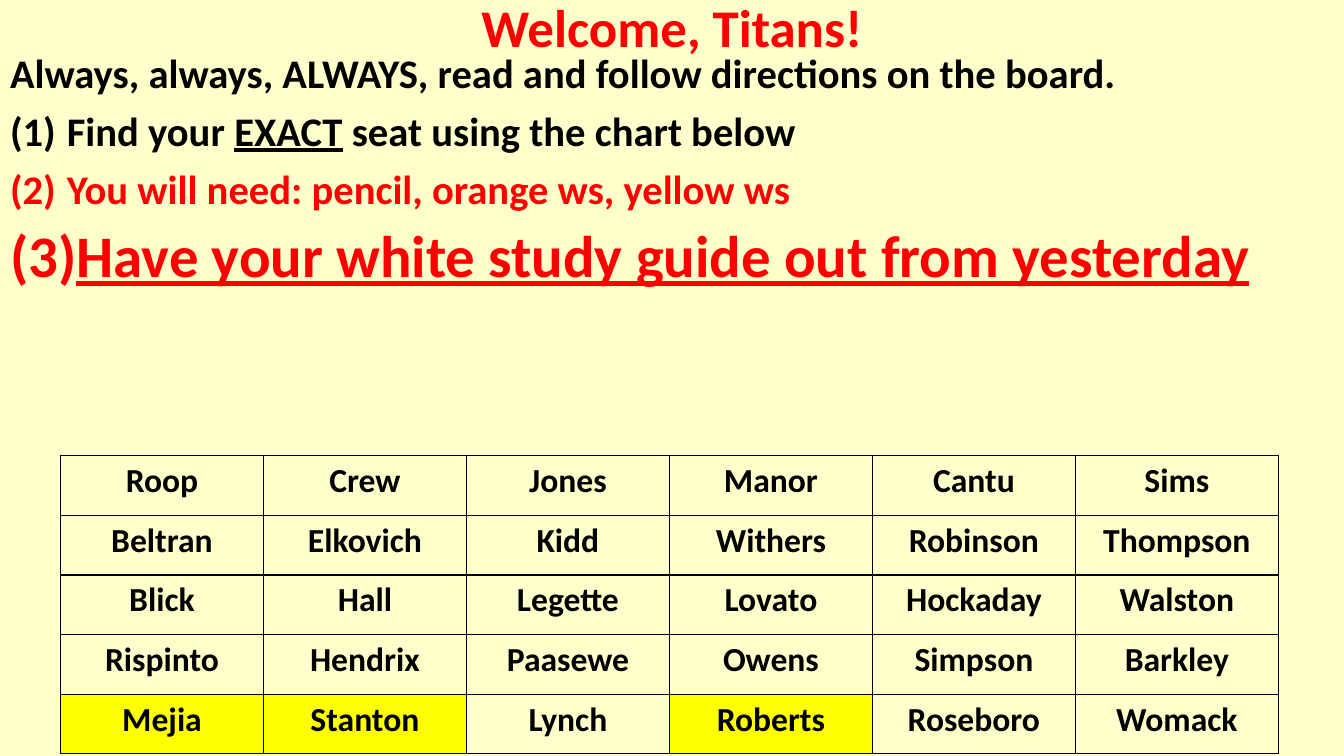
from lxml.etree import SubElement
from pptx import Presentation
from pptx.dml.color import RGBColor
from pptx.enum.text import MSO_ANCHOR, MSO_AUTO_SIZE, PP_ALIGN
from pptx.oxml.ns import qn
from pptx.util import Pt

LEFT, CENTER = PP_ALIGN.LEFT, PP_ALIGN.CENTER
TOP, BOTTOM = MSO_ANCHOR.TOP, MSO_ANCHOR.BOTTOM
NO_FIT = MSO_AUTO_SIZE.NONE

COLORS = {"back": "FFFFCC", "ink": "000000", "alert": "FF0000", "mark": "FFFF00"}

STEPS = [
    (False, 29, "ink", [("Always, always, ALWAYS, read and follow directions on the board.", False)]),
    (True, 29, "ink", [("Find your ", False), ("EXACT", True), (" seat using the chart below", False)]),
    (True, 29, "alert", [("You will need: pencil, orange ws, yellow ws", False)]),
    (True, 42, "alert", [("Have your white study guide out from yesterday", True)]),
]

SEATS = [
    ["Roop", "Crew", "Jones", "Manor", "Cantu", "Sims"],
    ["Beltran", "Elkovich", "Kidd", "Withers", "Robinson", "Thompson"],
    ["Blick", "Hall", "Legette", "Lovato", "Hockaday", "Walston"],
    ["Rispinto", "Hendrix", "Paasewe", "Owens", "Simpson", "Barkley"],
    ["Mejia", "Stanton", "Lynch", "Roberts", "Roseboro", "Womack"],
]
MARKED = {"Mejia", "Stanton", "Roberts"}


class Board:
    """Holds the text style and the slide, and adds each kind of element."""

    def __init__(self, slide, font):
        self.slide = slide
        self.font = font
        self.paint(slide.background.fill, "back")

    def paint(self, fill, color):
        fill.solid()
        fill.fore_color.rgb = RGBColor.from_string(COLORS[color])

    def run(self, para, text, size, color, under=False):
        run = para.add_run()
        run.text = text
        font = run.font
        font.name, font.size, font.bold = self.font, Pt(size), True
        font.underline = under
        font.color.rgb = RGBColor.from_string(COLORS[color])

    def place(self, shape, top, height, anchor):
        shape.left, shape.top = Pt(0), Pt(top)
        shape.width, shape.height = Pt(960), Pt(height)
        frame = shape.text_frame
        frame.word_wrap = True
        frame.auto_size = NO_FIT
        frame.vertical_anchor = anchor
        return frame

    def title(self, text):
        frame = self.place(self.slide.shapes.title, 0, 46, BOTTOM)
        para = frame.paragraphs[0]
        para.alignment, para.line_spacing = CENTER, 0.9
        self.run(para, text, 37.8, "alert")

    def steps(self, steps):
        frame = self.place(self.slide.placeholders[1], 34.5, 291, TOP)
        for i, (listed, size, color, runs) in enumerate(steps):
            para = frame.add_paragraph() if i else frame.paragraphs[0]
            para.alignment, para.line_spacing = LEFT, 0.9
            para.space_before = Pt(10)
            if listed:
                self.number(para)
            for text, under in runs:
                self.run(para, text, size, color, under)

    def number(self, para):
        props = para._p.get_or_add_pPr()
        props.set("marL", str(Pt(40.5)))
        props.set("indent", str(-Pt(40.5)))
        SubElement(props, qn("a:buFont"), typeface="+mj-lt")
        SubElement(props, qn("a:buAutoNum"), type="arabicParenBoth")

    def border(self, cell):
        props = cell._tc.get_or_add_tcPr()
        for side in ("lnL", "lnR", "lnT", "lnB"):
            line = SubElement(props, qn(f"a:{side}"), w=str(Pt(1)))
            fill = SubElement(line, qn("a:solidFill"))
            SubElement(fill, qn("a:srgbClr"), val=COLORS["ink"])

    def chart(self, seats, marked):
        rows, cols = len(seats), len(seats[0])
        frame = self.slide.shapes.add_table(
            rows, cols, Pt(43.2), Pt(325.5), Pt(145 * cols), Pt(42.6 * rows))
        table = frame.table
        table.first_row = table.horz_banding = False
        for r, names in enumerate(seats):
            for c, name in enumerate(names):
                cell = table.cell(r, c)
                self.border(cell)
                if name in marked:
                    self.paint(cell.fill, "mark")
                else:
                    cell.fill.background()
                para = cell.text_frame.paragraphs[0]
                para.alignment = CENTER
                self.run(para, name, 24, "ink")


def main():
    deck = Presentation()
    deck.slide_width, deck.slide_height = Pt(960), Pt(540)
    board = Board(deck.slides.add_slide(deck.slide_layouts[0]), "Calibri")
    board.title("Welcome, Titans!")
    board.steps(STEPS)
    board.chart(SEATS, MARKED)
    deck.save("out.pptx")


if __name__ == "__main__":
    main()
